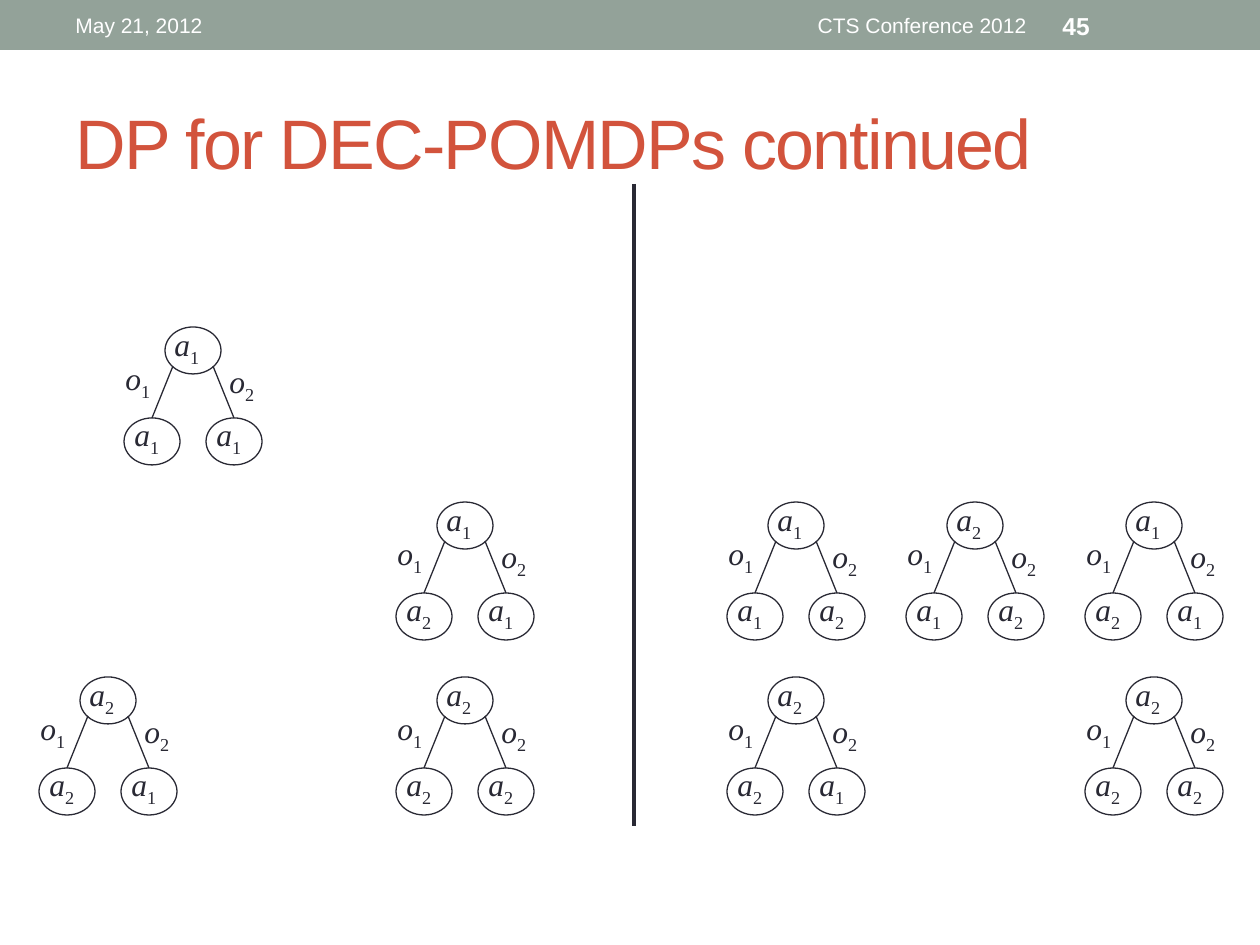
from pptx import Presentation
from pptx.dml.color import RGBColor
from pptx.enum.shapes import MSO_CONNECTOR, MSO_SHAPE
from pptx.enum.text import MSO_ANCHOR, MSO_AUTO_SIZE, PP_ALIGN
from pptx.oxml.ns import qn
from pptx.util import Emu, Pt
from lxml.etree import SubElement

INK, RUST, SAGE, WHITE = "292934", "D2533C", "93A299", "FFFFFF"
LEFT_AGENT_X = (80, 165, 437)
RIGHT_AGENT_X = (768, 947, 1126)
ROW_Y = (327, 502, 677)

# Root position, then the actions at the root, left leaf and right leaf
TREES = [
    (LEFT_AGENT_X[2], ROW_Y[1], "121"),
    (LEFT_AGENT_X[0], ROW_Y[2], "221"),
    (LEFT_AGENT_X[2], ROW_Y[2], "222"),
    (LEFT_AGENT_X[1], ROW_Y[0], "111"),
    (RIGHT_AGENT_X[0], ROW_Y[1], "112"),
    (RIGHT_AGENT_X[1], ROW_Y[1], "212"),
    (RIGHT_AGENT_X[2], ROW_Y[1], "121"),
    (RIGHT_AGENT_X[0], ROW_Y[2], "221"),
    (RIGHT_AGENT_X[2], ROW_Y[2], "222"),
]
# Offsets from the root's top left corner
NODES = [(0, 0), (-41, 91), (41, 91)]
EDGES = [(-13, 91, 8, 39), (69, 91, 48, 39)]
ACTION_LABELS = [(-3, -8), (-43, 82), (39, 82)]
OBSERVATION_LABELS = [(-52, 26), (52, 29)]


def px(length):
    return Emu(round(length * 914400 / 126))


def color(value):
    return RGBColor.from_string(value)


def add_line(shapes, x1, y1, x2, y2, width):
    line = shapes.add_connector(MSO_CONNECTOR.STRAIGHT, px(x1), px(y1), px(x2), px(y2))
    line.line.color.rgb = color(INK)
    line.line.width = Pt(width)
    SubElement(line._element.spPr, qn("a:effectLst"))


def add_node(shapes, x, y):
    node = shapes.add_shape(MSO_SHAPE.OVAL, px(x), px(y), px(56), px(47))
    node.shadow.inherit = False
    node.fill.background()
    node.line.color.rgb = color(INK)
    node.line.width = Pt(0.75)


def add_text(shapes, x, y, width, height, text, size, ink, font="Arial"):
    box = shapes.add_textbox(px(x), px(y), px(width), px(height))
    frame = box.text_frame
    frame.word_wrap = True
    frame.vertical_anchor = MSO_ANCHOR.MIDDLE
    para = frame.paragraphs[0]
    para.add_run().text = text
    para.font.name = font
    para.font.size = Pt(size)
    para.font.color.rgb = color(ink)
    return box


def add_label(shapes, x, y, letter, index):
    """Add an italic letter with an upright subscript."""
    box = add_text(shapes, x, y, 55, 50, letter, 18, INK, "Times New Roman")
    frame = box.text_frame
    frame.vertical_anchor = MSO_ANCHOR.TOP
    frame.auto_size = MSO_AUTO_SIZE.SHAPE_TO_FIT_TEXT
    para = frame.paragraphs[0]
    para.runs[0].font.italic = True
    subscript = para.add_run()
    subscript.text = index
    subscript._r.get_or_add_rPr().set("baseline", "-25000")


def add_tree(page, x, y, actions):
    shapes = page.shapes.add_group_shape().shapes
    for dx, dy in NODES:
        add_node(shapes, x + dx, y + dy)
    for x1, y1, x2, y2 in EDGES:
        add_line(shapes, x + x1, y + y1, x + x2, y + y2, 0.75)
    for (dx, dy), action in zip(ACTION_LABELS, actions):
        add_label(shapes, x + dx, y + dy, "a", action)
    for (dx, dy), observation in zip(OBSERVATION_LABELS, "12"):
        add_label(shapes, x + dx, y + dy, "o", observation)


def add_header(page):
    band = page.shapes.add_shape(MSO_SHAPE.RECTANGLE, 0, 0, px(1260), px(50))
    band.shadow.inherit = False
    band.fill.solid()
    band.fill.fore_color.rgb = color(SAGE)
    band.line.fill.background()
    add_text(page.shapes, 63, 3, 399, 45, "May 21, 2012", 12, WHITE)
    event = add_text(page.shapes, 473, 3, 566, 45, "CTS Conference 2012", 12, WHITE)
    event.text_frame.paragraphs[0].alignment = PP_ALIGN.RIGHT
    number = add_text(page.shapes, 1050, 3, 147, 45, "45", 14, WHITE)
    number.text_frame.paragraphs[0].font.bold = True


def add_title(page):
    title = add_text(page.shapes, 63, 73, 1134, 136, "DP for DEC-POMDPs continued", 40, RUST)
    span = title.text_frame.paragraphs[0].runs[0]
    span._r.get_or_add_rPr().set("spc", "-100")


def main():
    deck = Presentation()
    deck.slide_width, deck.slide_height = px(1260), px(945)
    page = deck.slides.add_slide(deck.slide_layouts[6])
    add_header(page)
    add_title(page)
    add_line(page.shapes, 634, 184, 634, 826, 2.25)
    for x, y, actions in TREES:
        add_tree(page, x, y, actions)
    deck.save("out.pptx")


if __name__ == "__main__":
    main()
